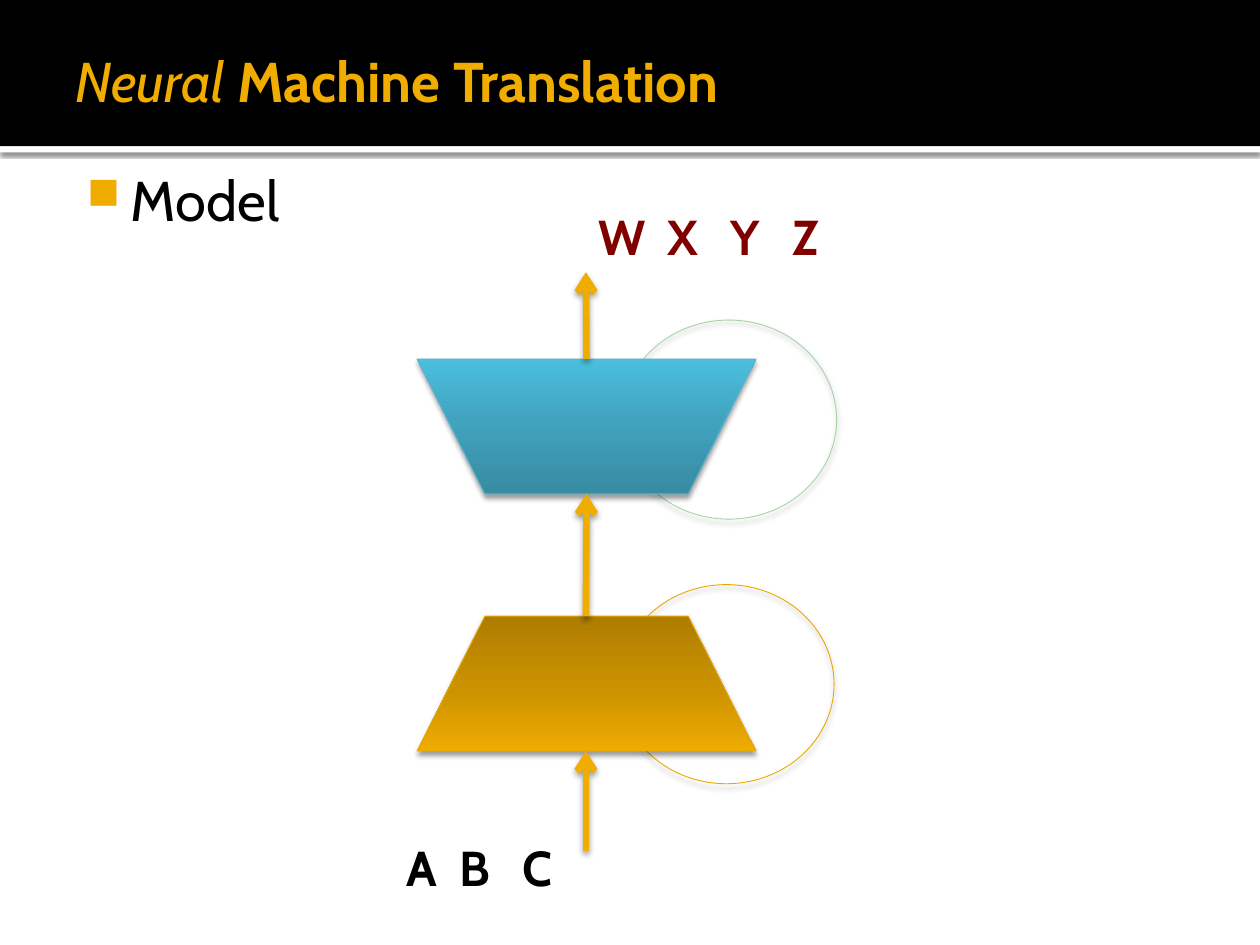
import copy
from dataclasses import dataclass

import lxml.etree
import pptx
import pptx.dml.color
import pptx.enum.shapes
import pptx.enum.text
import pptx.oxml
import pptx.oxml.ns
import pptx.util

Inches = pptx.util.Inches
Pt = pptx.util.Pt
qn = pptx.oxml.ns.qn
SHAPE = pptx.enum.shapes.MSO_SHAPE


@dataclass(frozen=True)
class Theme:
    font: str = "Cabin"
    heading: float = 32
    letters: float = 28
    accent: str = "F0AD00"
    black: str = "000000"
    white: str = "FFFFFF"
    target: str = "800000"
    encoder_line: str = "EBA900"
    decoder_line: str = "5BB3CA"
    decoder_loop: str = "A6D4A7"
    encoder_fill: tuple = ("AE7D00", "CC9300", "EEAB00")
    decoder_fill: tuple = ("378BA2", "41A4BF", "4BBFDE")
    thin: float = 0.5
    thick: float = 3.78


@dataclass(frozen=True)
class Shadow:
    opacity: int = 38
    blur: float = 3.1
    distance: float = 2


@dataclass(frozen=True)
class Box:
    left: float
    top: float
    width: float
    height: float

    def emu(self) -> list:
        return [Inches(v) for v in (self.left, self.top, self.width, self.height)]


@dataclass(frozen=True)
class Run:
    text: str
    size: float
    color: str
    bold: bool = False
    italic: bool = False


@dataclass(frozen=True)
class Stage:
    box: Box
    loop: Box
    fill: tuple
    line: str
    loop_line: str
    rotation: int = 0


@dataclass(frozen=True)
class Sequence:
    box: Box
    letters: str
    tabs: tuple
    color: str


THEME = Theme()
ENCODER = Stage(Box(3.31, 4.89, 2.69, 1.07), Box(4.91, 4.64, 1.71, 1.58),
                THEME.encoder_fill, THEME.encoder_line, THEME.encoder_line, 180)
DECODER = Stage(Box(3.31, 2.85, 2.69, 1.07), Box(4.93, 2.54, 1.71, 1.58),
                THEME.decoder_fill, THEME.decoder_line, THEME.decoder_loop)
SEQUENCES = (
    Sequence(Box(3.13, 6.6, 1.52, 0.57), "ABC", (0.42, 0.92), THEME.black),
    Sequence(Box(4.65, 1.59, 1.98, 0.57), "WXYZ", (0.55, 1.05, 1.54), THEME.target),
)
FLOW_X = 4.65


def rgb(value: str):
    return pptx.dml.color.RGBColor.from_string(value)


def add_xml(parent, xml: str) -> None:
    ns = pptx.oxml.ns.nsdecls("a")
    parent.append(pptx.oxml.parse_xml(xml.replace(" ", f" {ns} ", 1)))


def cast_shadow(sp, shadow: Shadow) -> None:
    add_xml(sp._element.spPr,
            f'<a:effectLst ><a:outerShdw blurRad="{Pt(shadow.blur)}" dist="{Pt(shadow.distance)}" '
            f'dir="5400000" rotWithShape="0"><a:srgbClr val="{THEME.black}">'
            f'<a:alpha val="{shadow.opacity * 1000}"/></a:srgbClr></a:outerShdw></a:effectLst>')


def add_band(s, box: Box, color: str):
    sp = s.shapes.add_shape(SHAPE.RECTANGLE, *box.emu())
    sp.shadow.inherit = False
    sp.fill.solid()
    sp.fill.fore_color.rgb = rgb(color)
    sp.line.fill.background()
    return sp


def add_outlined(s, kind, box: Box, line: str):
    sp = s.shapes.add_shape(kind, *box.emu())
    sp.line.color.rgb = rgb(line)
    sp.line.width = Pt(THEME.thin)
    return sp


def add_loop(s, stage: Stage) -> None:
    sp = add_outlined(s, SHAPE.OVAL, stage.loop, stage.loop_line)
    sp.fill.background()
    cast_shadow(sp, Shadow())


def add_stage(s, stage: Stage):
    sp = add_outlined(s, SHAPE.FLOWCHART_MANUAL_OPERATION, stage.box, stage.line)
    sp.rotation = stage.rotation
    sp.fill.gradient()
    sp.fill.gradient_angle = 90
    # The default gradient has two stops; a middle one is added
    stops = sp._element.spPr.find(qn("a:gradFill")).find(qn("a:gsLst"))
    stops.insert(1, copy.deepcopy(stops[0]))
    for stop, position, color in zip(sp.fill.gradient_stops, (0, 0.55, 1), stage.fill):
        stop.position = position
        stop.color.rgb = rgb(color)
    cast_shadow(sp, Shadow())
    return sp


def add_arrow(s, start: float, end: float):
    line = s.shapes.add_connector(pptx.enum.shapes.MSO_CONNECTOR.STRAIGHT,
                                  Inches(FLOW_X), Inches(start), Inches(FLOW_X), Inches(end))
    line.line.color.rgb = rgb(THEME.accent)
    line.line.width = Pt(THEME.thick)
    add_xml(line.line._get_or_add_ln(), '<a:tailEnd type="arrow"/>')
    cast_shadow(line, Shadow(distance=2, blur=3.5))
    return line


def add_text(s, box: Box, runs: list, insets: tuple = (0.1, 0.05, 0.1, 0.05)):
    tf = s.shapes.add_textbox(*box.emu()).text_frame
    tf.word_wrap = True
    tf.margin_left, tf.margin_top, tf.margin_right, tf.margin_bottom = map(Inches, insets)
    p = tf.paragraphs[0]
    for run in runs:
        r = p.add_run()
        r.text = run.text
        r.font.name = THEME.font
        r.font.size = Pt(run.size)
        r.font.bold = run.bold
        r.font.italic = run.italic
        r.font.color.rgb = rgb(run.color)
    return tf


def add_sequence(s, seq: Sequence) -> None:
    tf = add_text(s, seq.box, [Run("\t".join(seq.letters), THEME.letters, seq.color, bold=True)])
    tf.auto_size = pptx.enum.text.MSO_AUTO_SIZE.SHAPE_TO_FIT_TEXT
    tabs = "".join(f'<a:tab pos="{Inches(t)}" algn="l"/>' for t in seq.tabs)
    add_xml(tf.paragraphs[0]._p.get_or_add_pPr(), f"<a:tabLst >{tabs}</a:tabLst>")


def main() -> None:
    prs = pptx.Presentation()
    prs.slide_width, prs.slide_height = Inches(10), Inches(7.5)
    s = prs.slides.add_slide(prs.slide_layouts[6])

    # Header bands
    rule = add_band(s, Box(0, 1.16, 10, 0.05), THEME.white)
    effects = rule._element.spPr.find(qn("a:effectLst"))
    rule._element.spPr.remove(effects)
    cast_shadow(rule, Shadow(60, 2.5, 0.8))
    add_band(s, Box(0, 0, 10, 1.16), THEME.black)

    # Recurrent loops behind the stages
    for stage in (DECODER, ENCODER):
        add_loop(s, stage)

    # Title and bullet
    title = add_text(s, Box(0.5, 0.17, 9, 0.93),
                     [Run("Neural ", THEME.heading, THEME.accent, italic=True),
                      Run("Machine Translation", THEME.heading, THEME.accent, bold=True)],
                     (0.1, 0.05, 0.05, 0.05))
    title.vertical_anchor = pptx.enum.text.MSO_ANCHOR.MIDDLE
    body = add_text(s, Box(0.5, 1.21, 9, 5.79),
                    [Run("Model", THEME.heading, THEME.black)], (0.06, 0.1, 0.1, 0.05))
    pPr = body.paragraphs[0]._p.get_or_add_pPr()
    pPr.set("marL", str(Inches(0.48)))
    pPr.set("indent", str(Inches(-0.35)))
    add_xml(pPr, f'<a:buClr ><a:srgbClr val="{THEME.accent}"/></a:buClr>')
    add_xml(pPr, '<a:buSzPct val="80000"/>')
    add_xml(pPr, '<a:buChar char="■"/>')

    # Encoder, decoder and the flow between them
    add_stage(s, ENCODER)
    decoder = add_stage(s, DECODER)
    add_arrow(s, 4.89, 3.93).end_connect(decoder, 2)
    add_arrow(s, 6.75, 5.96)
    add_arrow(s, 2.85, 2.16).begin_connect(decoder, 0)

    # Source and target sequences
    for seq in SEQUENCES:
        add_sequence(s, seq)

    prs.save("out.pptx")


if __name__ == "__main__":
    main()
